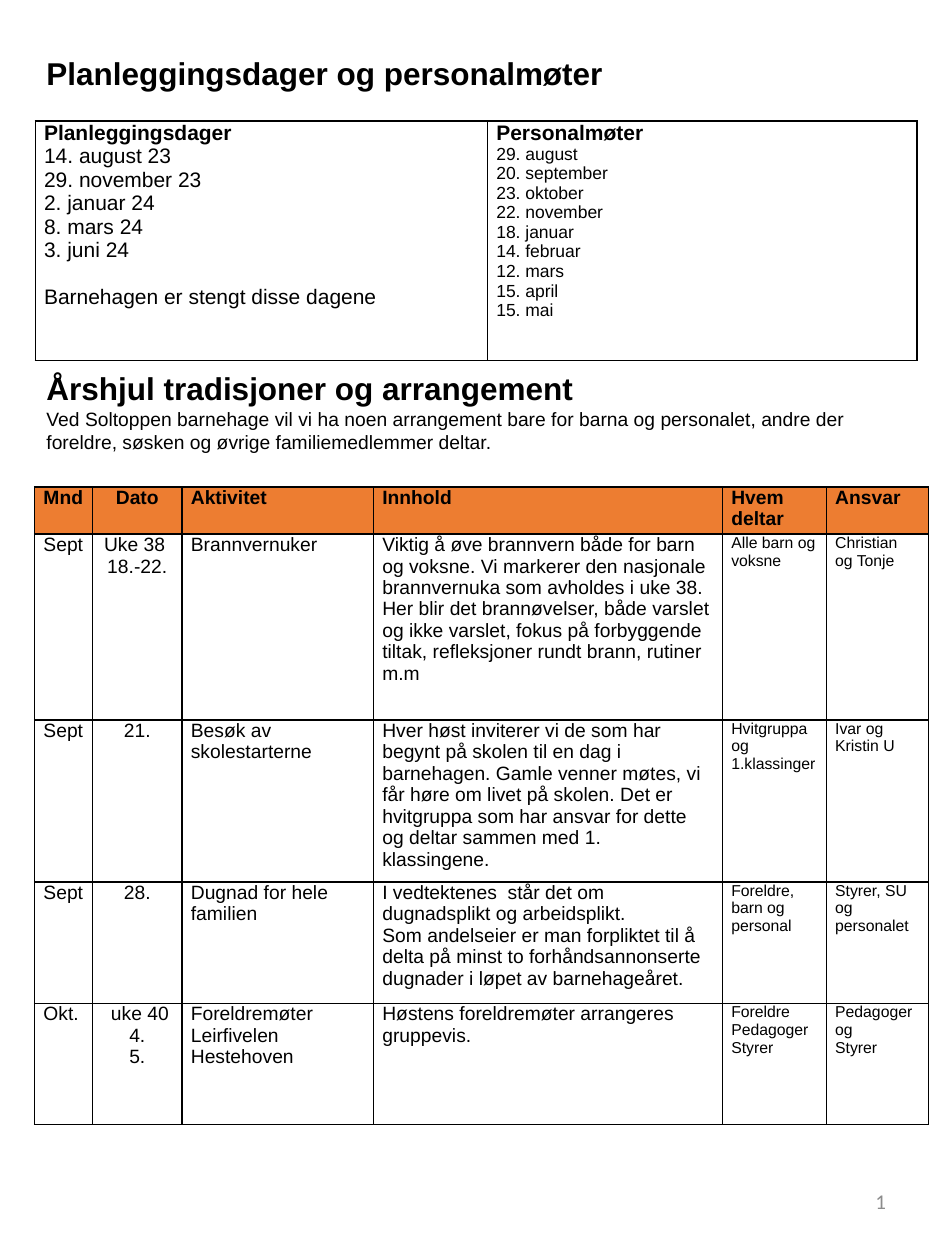
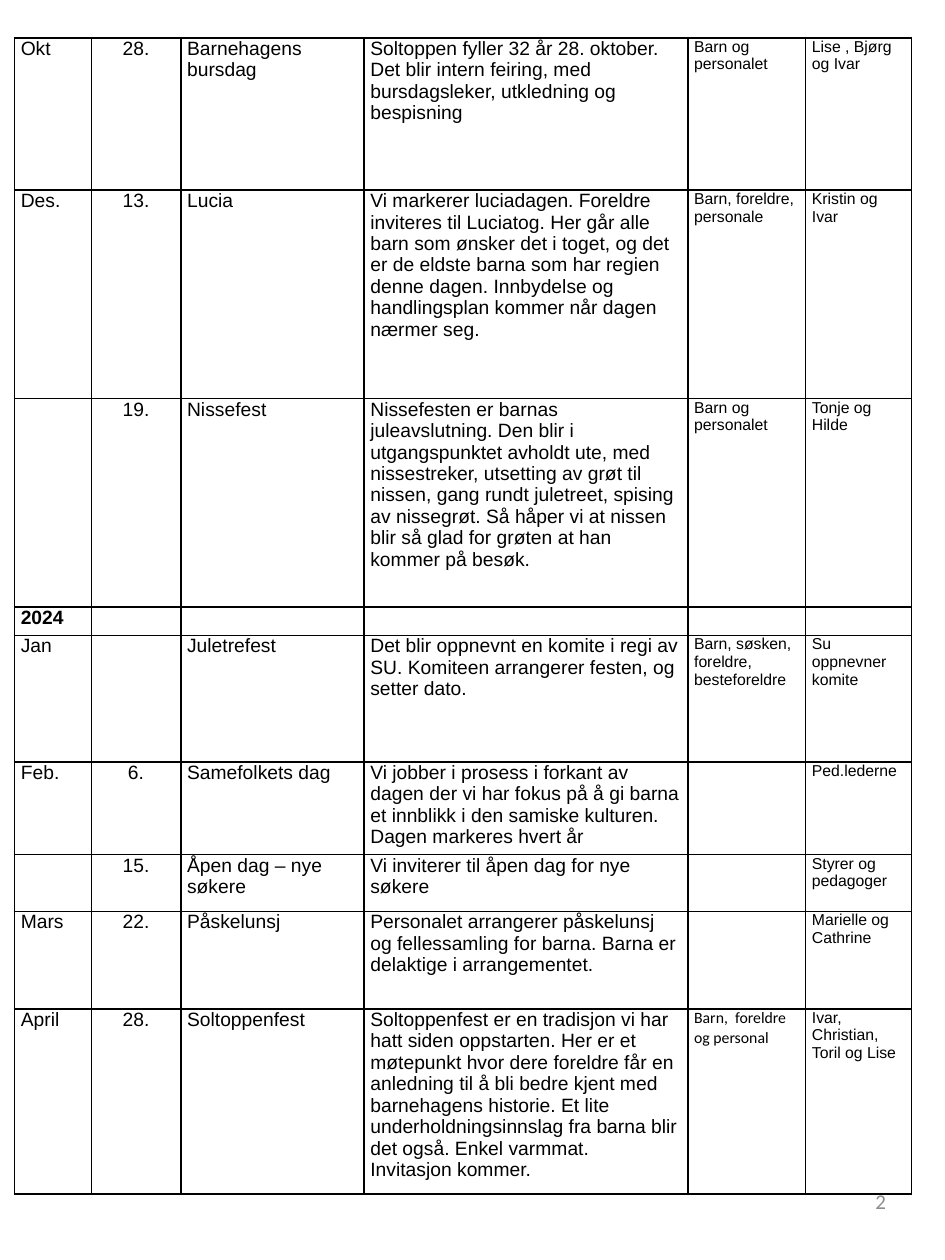
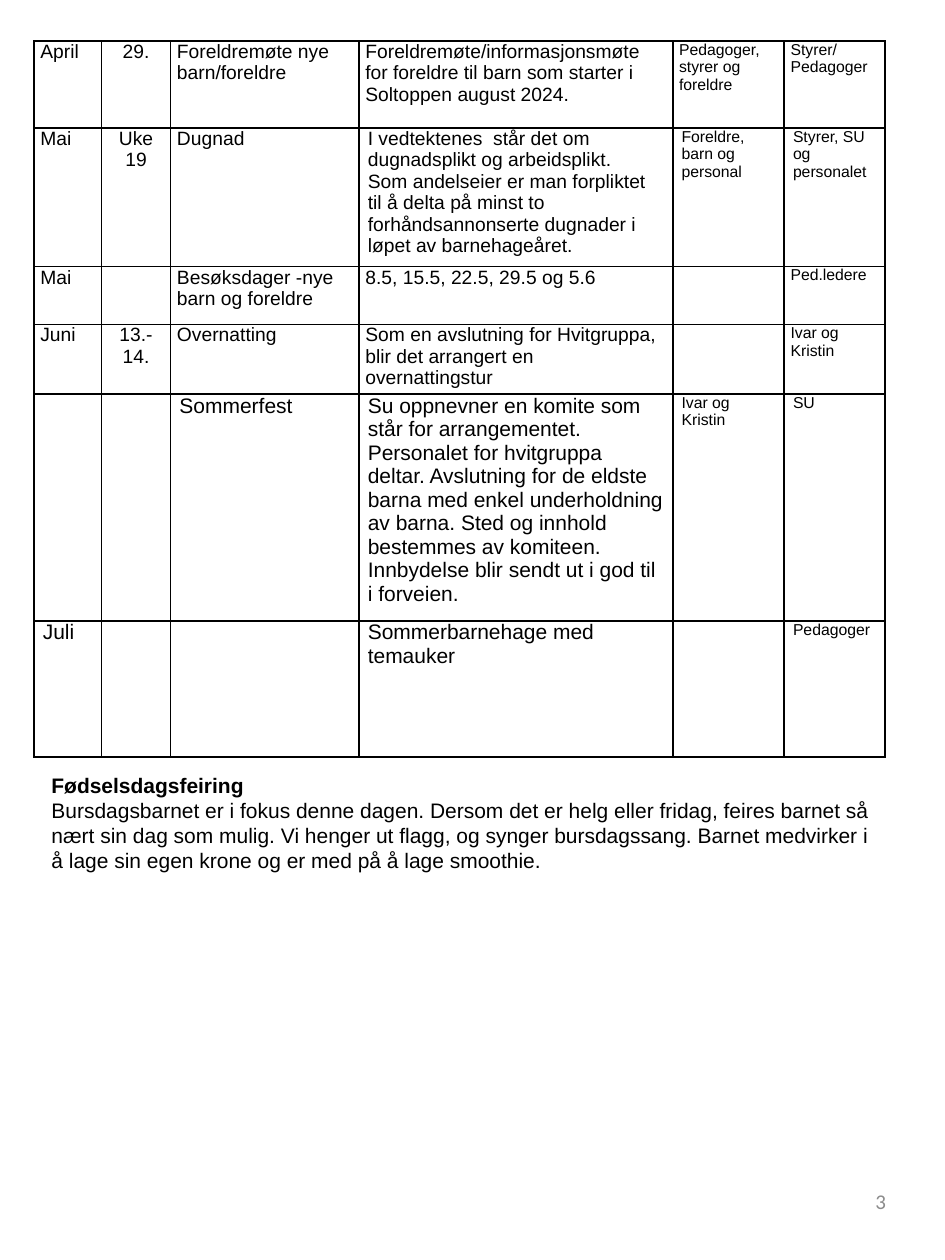
from lxml import etree
from pptx import Presentation
from pptx.dml.color import RGBColor
from pptx.enum.text import MSO_ANCHOR, PP_ALIGN
from pptx.oxml.ns import qn
from pptx.util import Inches, Pt

LEFT, CENTER, RIGHT = PP_ALIGN.LEFT, PP_ALIGN.CENTER, PP_ALIGN.RIGHT
TOP, MIDDLE = MSO_ANCHOR.TOP, MSO_ANCHOR.MIDDLE

COLORS = {"text": "000000", "header": "ED7D31", "number": "8C8C8C"}
GRID_COLUMNS, GRID_ROWS = 75, 100
BORDER_SIDES = ("a:lnL", "a:lnR", "a:lnT", "a:lnB")


class Plan:
    font = "Arial"
    heading_size, body_size, note_size = 18, 11, 9

    def __init__(self):
        self.deck = Presentation()
        self.deck.slide_width = Inches(7.5)
        self.deck.slide_height = Inches(10)
        self.page = None
        self.count = 0

    def across(self, columns):
        return round(self.deck.slide_width * columns / GRID_COLUMNS)

    def down(self, rows):
        return round(self.deck.slide_height * rows / GRID_ROWS)

    def area(self, left, top, width, height):
        return self.across(left), self.down(top), self.across(width), self.down(height)

    def new_page(self):
        self.page = self.deck.slides.add_slide(self.deck.slide_layouts[6])
        self.count += 1
        self.text((53.8, 92.7, 17.5, 5.3), [(str(self.count), {
            "size": 12, "font": "Calibri", "color": "number", "align": RIGHT})], MIDDLE)

    def fill_lines(self, frame, lines):
        for index, (text, style) in enumerate(lines):
            para = frame.add_paragraph() if index else frame.paragraphs[0]
            para.text = text
            para.alignment = style.get("align", LEFT)
            para.space_before = Pt(style.get("before", 0))
            para.font.size = Pt(style.get("size", self.body_size))
            para.font.name = style.get("font", self.font)
            para.font.bold = style.get("bold", False)
            para.font.color.rgb = RGBColor.from_string(COLORS[style.get("color", "text")])

    def text(self, place, lines, anchor=TOP):
        frame = self.page.shapes.add_textbox(*self.area(*place)).text_frame
        frame.word_wrap = True
        frame.vertical_anchor = anchor
        self.fill_lines(frame, lines)

    def border(self, cell):
        properties = cell._tc.get_or_add_tcPr()
        for index, side in enumerate(BORDER_SIDES):
            line = etree.Element(qn(side), w=str(Pt(1)))
            fill = etree.SubElement(line, qn("a:solidFill"))
            etree.SubElement(fill, qn("a:srgbClr"), val=COLORS["text"])
            properties.insert(index, line)

    def table(self, left, top, widths, heights, rows, inset, header=False):
        place = self.area(left, top, sum(widths), sum(heights))
        table = self.page.shapes.add_table(len(rows), len(widths), *place).table
        table.first_row = table.horz_banding = False
        for column, width in zip(table.columns, widths):
            column.width = self.across(width)
        for row, height in zip(table.rows, heights):
            row.height = self.down(height)
        for row_index, row in enumerate(rows):
            for column_index, lines in enumerate(row):
                cell = table.cell(row_index, column_index)
                style = lines[0][1]
                cell.margin_left = cell.margin_right = self.across(style.get("inset", inset))
                cell.margin_top = cell.margin_bottom = 0
                if header and row_index == 0:
                    cell.fill.solid()
                    cell.fill.fore_color.rgb = RGBColor.from_string(COLORS["header"])
                else:
                    cell.fill.background()
                self.border(cell)
                self.fill_lines(cell.text_frame, lines)

    def calendar(self, left, top, widths, heights, rows, inset, header=False, special=None):
        special = special or {}
        styled_rows = []
        for row_index, row in enumerate(rows):
            is_header = header and row_index == 0
            cells = []
            for column_index, text in enumerate(row):
                is_note = column_index > 3 and not is_header
                style = {"size": self.note_size if is_note else self.body_size,
                         "align": CENTER if column_index == 1 else LEFT, "bold": is_header}
                style.update(special.get((row_index, column_index), {}))
                cells.append([(line, style) for line in text.split("\n")])
            styled_rows.append(cells)
        self.table(left, top, widths, heights, styled_rows, inset, header)


HEADING = {"size": Plan.heading_size, "bold": True}
LABEL = {"size": 12, "bold": True}
BODY = {"size": 12}
DATE = {"size": 10}

PLANNING_DAYS = ["14. august 23", "29. november 23", "2. januar 24", "8. mars 24", "3. juni 24"]
STAFF_MEETINGS = ["29. august", "20. september", "23. oktober", "22. november", "18. januar",
                  "14. februar", "12. mars", "15. april", "15. mai"]
VOLUNTEER_WORK = (
    "I vedtektenes  står det om dugnadsplikt og arbeidsplikt.\n"
    "Som andelseier er man forpliktet til å delta på minst to forhåndsannonserte "
    "dugnader i løpet av barnehageåret.")
VOLUNTEERS = "Foreldre, barn og personal"
VOLUNTEER_LEADERS = "Styrer, SU og personalet"

AUTUMN = [
    ["Mnd", "Dato", "Aktivitet", "Innhold", "Hvem deltar", "Ansvar"],
    ["Sept", "Uke 38 \n18.-22.", "Brannvernuker",
     "Viktig å øve brannvern både for barn og voksne. Vi markerer den nasjonale brannvernuka "
     "som avholdes i uke 38. Her blir det brannøvelser, både varslet og ikke varslet, fokus på "
     "forbyggende tiltak, refleksjoner rundt brann, rutiner m.m",
     "Alle barn og voksne", "Christian\nog Tonje"],
    ["Sept", "21.", "Besøk av skolestarterne",
     "Hver høst inviterer vi de som har begynt på skolen til en dag i barnehagen. Gamle venner "
     "møtes, vi får høre om livet på skolen. Det er hvitgruppa som har ansvar for dette og "
     "deltar sammen med 1. klassingene.",
     "Hvitgruppa og 1.klassinger", "Ivar og Kristin U"],
    ["Sept", "28.", "Dugnad for hele familien", VOLUNTEER_WORK, VOLUNTEERS, VOLUNTEER_LEADERS],
    ["Okt.", " uke 40\n4.\n5.", "Foreldremøter\nLeirfivelen\nHestehoven",
     "Høstens foreldremøter arrangeres gruppevis.",
     "Foreldre\nPedagoger\nStyrer", "Pedagoger og\nStyrer"],
]

WINTER = [
    ["Okt", "28.", "Barnehagens bursdag",
     "Soltoppen fyller 32 år 28. oktober. Det blir intern feiring, med bursdagsleker, "
     "utkledning og bespisning", "Barn og personalet", "Lise , Bjørg og Ivar"],
    ["Des.", "13.", "Lucia",
     "Vi markerer luciadagen. Foreldre inviteres til Luciatog. Her går alle barn som ønsker det "
     "i toget, og det er de eldste barna som har regien denne dagen. Innbydelse og handlingsplan "
     "kommer når dagen nærmer seg.", "Barn, foreldre, personale", "Kristin og Ivar"],
    ["", "19.", "Nissefest",
     "Nissefesten er barnas juleavslutning. Den blir i utgangspunktet avholdt ute, med "
     "nissestreker, utsetting av grøt til nissen, gang rundt juletreet, spising av nissegrøt. "
     "Så håper vi at nissen blir så glad for grøten at han kommer på besøk.",
     "Barn og personalet", "Tonje og Hilde"],
    ["2024", "", "", "", "", ""],
    ["Jan", "", "Juletrefest",
     "Det blir oppnevnt en komite i regi av SU. Komiteen arrangerer festen, og setter dato.",
     "Barn, søsken, foreldre, besteforeldre", "Su oppnevner komite"],
    ["Feb.", "6.", "Samefolkets dag",
     "Vi jobber i prosess i forkant av dagen der vi har fokus på å gi barna et innblikk i den "
     "samiske kulturen.\nDagen markeres hvert år", "", "Ped.lederne"],
    ["", "15.", "Åpen dag – nye søkere", "Vi inviterer til åpen dag for nye søkere",
     "", "Styrer og pedagoger"],
    ["Mars", "22.", "Påskelunsj",
     "Personalet arrangerer påskelunsj og fellessamling for barna. Barna er delaktige i "
     "arrangementet.", "", "Marielle og Cathrine"],
    ["April", "28.", "Soltoppenfest",
     "Soltoppenfest er en tradisjon vi har hatt siden oppstarten. Her er et møtepunkt hvor dere "
     "foreldre får en anledning til å bli bedre kjent med barnehagens historie. Et lite "
     "underholdningsinnslag fra barna blir det også. Enkel varmmat.  Invitasjon kommer.",
     "Barn,  foreldre og personal", "Ivar, Christian, Toril og Lise"],
]

SPRING = [
    ["April", "29.", "Foreldremøte nye barn/foreldre",
     "Foreldremøte/informasjonsmøte for foreldre til barn som starter i Soltoppen august 2024.",
     "Pedagoger,\nstyrer og  foreldre", "Styrer/\nPedagoger"],
    ["Mai", "Uke 19", "Dugnad", VOLUNTEER_WORK, VOLUNTEERS, VOLUNTEER_LEADERS],
    ["Mai", "", "Besøksdager -nye barn og foreldre", "8.5, 15.5, 22.5, 29.5 og 5.6",
     "", "Ped.ledere"],
    ["Juni", "13.-14.", "Overnatting",
     "Som en avslutning for Hvitgruppa, blir det arrangert en overnattingstur",
     "", "Ivar og Kristin"],
    ["", "", "Sommerfest",
     "Su oppnevner en komite som står for arrangementet. Personalet for hvitgruppa deltar. "
     "Avslutning for de eldste barna med enkel underholdning av barna. Sted og innhold bestemmes "
     "av komiteen. Innbydelse blir sendt ut i god til i forveien.", "Ivar og Kristin", "SU"],
    ["Juli", "", "", "Sommerbarnehage med temauker", "", "Pedagoger"],
]


def autumn_page(plan):
    plan.new_page()
    plan.text((2.7, 3.8, 61.9, 4), [("Planleggingsdager og personalmøter", HEADING)])
    planning = [("Planleggingsdager", LABEL)] + [(day, BODY) for day in PLANNING_DAYS]
    planning.append(("Barnehagen er stengt disse dagene", {"size": 12, "before": 13.5}))
    meetings = [("Personalmøter", LABEL)] + [(day, DATE) for day in STAFF_MEETINGS]
    plan.table(2.8, 9.6, [35.9, 34.1], [19], [[planning, meetings]], 0.7)
    plan.text((2.7, 28.8, 70.1, 7.9), [
        ("Årshjul tradisjoner og arrangement", HEADING),
        ("Ved Soltoppen barnehage vil vi ha noen arrangement bare for barna og personalet, andre "
         "der foreldre, søsken og øvrige familiemedlemmer deltar.", {})])
    plan.calendar(2.75, 38.65, [4.6, 7.1, 15.2, 27.7, 8.25, 8.1],
                  [3.75, 14.75, 12.5, 9.65, 9.6], AUTUMN, 0.7, header=True)


def winter_page(plan):
    plan.new_page()
    plan.calendar(1.15, 3, [6.1, 7.1, 14.55, 25.7, 9.35, 8.4],
                  [12.1, 16.55, 16.55, 2.25, 10.05, 7.35, 4.5, 7.75, 14.7], WINTER, 0.5,
                  special={(3, 0): {"bold": True}, (8, 4): {"font": "Calibri"}})


def spring_page(plan):
    plan.new_page()
    special = {(1, column): {"inset": 0.7} for column in (3, 4, 5)}
    for row in (4, 5):
        special.update({(row, column): {"inset": 0.7, "size": 12 if column < 4 else plan.note_size}
                        for column in range(6)})
    plan.calendar(2.7, 3.25, [5.35, 5.5, 14.95, 24.9, 8.85, 8],
                  [6.9, 11, 4.6, 5.5, 18, 10.8], SPRING, 0.5, special=special)
    plan.text((3.1, 60.8, 67.5, 11.1), [
        ("Fødselsdagsfeiring", LABEL),
        ("Bursdagsbarnet er i fokus denne dagen. Dersom det er helg eller fridag, feires barnet så "
         "nært sin dag som mulig. Vi henger ut flagg, og synger bursdagssang. Barnet medvirker i "
         "å lage sin egen krone og er med på å lage smoothie.", BODY)])


def main():
    plan = Plan()
    autumn_page(plan)
    winter_page(plan)
    spring_page(plan)
    plan.deck.save("out.pptx")


if __name__ == "__main__":
    main()
